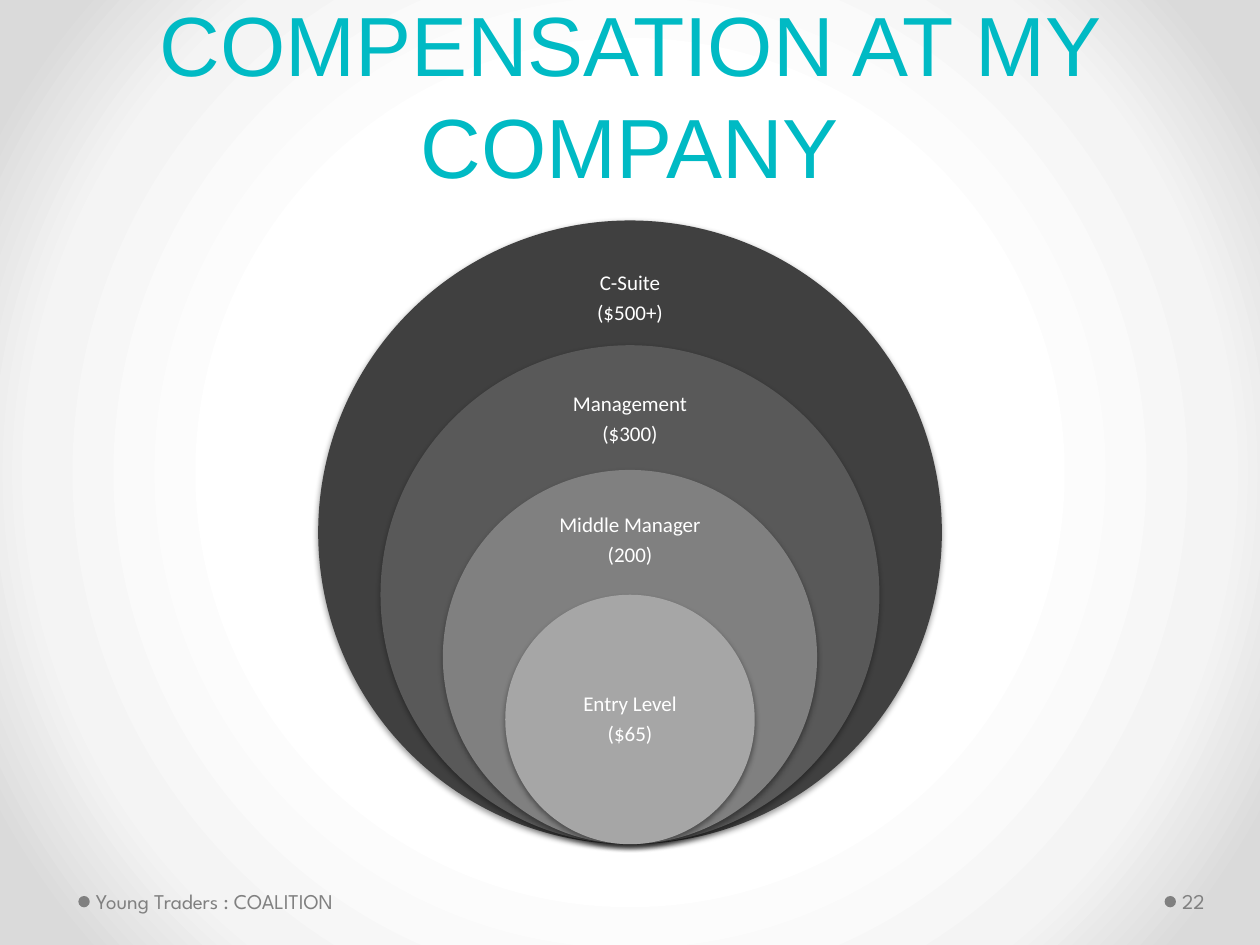
import pptx
import pptx.dml.color
import pptx.enum.shapes
import pptx.enum.text
import pptx.oxml
import pptx.oxml.ns
import pptx.util

Pt = pptx.util.Pt
ALIGN = pptx.enum.text.PP_ALIGN
ANCHOR = pptx.enum.text.MSO_ANCHOR

COLOURS = {
    "title": "00BAC4",
    "label": "FFFFFF",
    "footer": "808080",
    "suite": "404040",
    "management": "595959",
    "middle": "808080",
    "entry": "A6A6A6",
    "shadow": "000000",
}
BACKGROUND_STOPS = [(50, "FFFFFF"), (76, "F4F4F4"), (92, "DADADA")]

WIDTH, HEIGHT = 720, 540
CIRCLE_BOTTOM = 482.4
DIAMETER_STEP = 71.28
LABEL_WIDTH, LABEL_HEIGHT = 140, 40

# Diameter in steps, fill, label lines, distance from circle top to label centre
LEVELS = [
    (5, "suite", ["C-Suite", "($500+)"], 44.6),
    (4, "management", ["Management", "($300)"], 42.8),
    (3, "middle", ["Middle Manager", "(200)"], 40.3),
    (2, "entry", ["Entry Level", "($65)"], DIAMETER_STEP),
]


def rgb(name):
    return pptx.dml.color.RGBColor.from_string(COLOURS[name])


def write_text(shape, lines, *, font, size, colour, align=ALIGN.LEFT,
               anchor=ANCHOR.MIDDLE, insets=(0, 0, 0, 0),
               line_spacing=1.0, space_after=0):
    """Fill a shape with one paragraph per line; insets are left, top, right, bottom."""
    frame = shape.text_frame
    frame.word_wrap = True
    frame.auto_size = pptx.enum.text.MSO_AUTO_SIZE.NONE
    frame.vertical_anchor = anchor
    (frame.margin_left, frame.margin_top,
     frame.margin_right, frame.margin_bottom) = map(Pt, insets)
    frame.text = "\n".join(lines)
    for paragraph in frame.paragraphs:
        paragraph.alignment = align
        paragraph.line_spacing = line_spacing
        paragraph.space_before = Pt(0)
        paragraph.space_after = Pt(space_after)
        for run in paragraph.runs:
            run.font.name = font
            run.font.size = Pt(size)
            run.font.color.rgb = rgb(colour)


class SlideBuilder:
    def __init__(self, slide):
        self.slide = slide
        self.label_style = dict(font="Calibri", size=12, colour="label",
                                align=ALIGN.CENTER, line_spacing=0.9,
                                space_after=4.2)
        self.footer_style = dict(font="League Spartan", size=12,
                                 colour="footer", insets=(3, 3.6, 3.6, 3.6))

    def background(self, stops):
        """Set a circular gradient that spreads from the slide centre."""
        stop_xml = "".join(
            f'<a:gs pos="{position * 1000}"><a:srgbClr val="{colour}"/></a:gs>'
            for position, colour in stops)
        self.slide._element.cSld.insert(0, pptx.oxml.parse_xml(
            f'<p:bg {pptx.oxml.ns.nsdecls("p", "a")}><p:bgPr><a:gradFill>'
            f'<a:gsLst>{stop_xml}</a:gsLst><a:path path="circle">'
            '<a:fillToRect l="50000" t="50000" r="50000" b="50000"/></a:path>'
            '</a:gradFill><a:effectLst/></p:bgPr></p:bg>'))

    def title(self, text):
        title = self.slide.shapes.title
        title.left, title.top = Pt(36), Pt(10.8)
        title.width, title.height = Pt(648), Pt(104.4)
        write_text(title, [text], font="Arial", size=48, colour="title",
                   align=ALIGN.CENTER, anchor=ANCHOR.BOTTOM,
                   insets=(7.2, 3.6, 7.2, 3.6), line_spacing=Pt(58))

    def circle(self, left, top, diameter, colour):
        circle = self.slide.shapes.add_shape(
            pptx.enum.shapes.MSO_SHAPE.OVAL,
            Pt(left), Pt(top), Pt(diameter), Pt(diameter))
        circle.shadow.inherit = False
        circle.fill.solid()
        circle.fill.fore_color.rgb = rgb(colour)
        circle.line.fill.background()
        return circle

    def drop_shadow(self, shape):
        effects = shape._element.spPr.find(pptx.oxml.ns.qn("a:effectLst"))
        effects.append(pptx.oxml.parse_xml(
            f'<a:outerShdw {pptx.oxml.ns.nsdecls("a")} blurRad="{Pt(3.1)}" '
            f'dist="{Pt(1.6)}" dir="5400000" rotWithShape="0">'
            f'<a:srgbClr val="{COLOURS["shadow"]}"><a:alpha val="38000"/>'
            '</a:srgbClr></a:outerShdw>'))

    def text_box(self, left, top, width, height, lines, style):
        box = self.slide.shapes.add_textbox(
            Pt(left), Pt(top), Pt(width), Pt(height))
        write_text(box, lines, **style)

    def level(self, steps, colour, lines, label_centre):
        diameter = steps * DIAMETER_STEP
        top = CIRCLE_BOTTOM - diameter
        circle = self.circle((WIDTH - diameter) / 2, top, diameter, colour)
        self.drop_shadow(circle)
        self.text_box((WIDTH - LABEL_WIDTH) / 2,
                      top + label_centre - LABEL_HEIGHT / 2,
                      LABEL_WIDTH, LABEL_HEIGHT, lines, self.label_style)

    def footer(self, left, width, text):
        """Place footer text with a dot just before it."""
        self.circle(left - 7, 512, 6.5, "footer")
        self.text_box(left, 500.4, width, 28.8, [text], self.footer_style)


def main():
    presentation = pptx.Presentation()
    presentation.slide_width, presentation.slide_height = Pt(WIDTH), Pt(HEIGHT)
    title_only = presentation.slide_layouts[5]
    builder = SlideBuilder(presentation.slides.add_slide(title_only))

    builder.background(BACKGROUND_STOPS)
    builder.title("COMPENSATION AT MY COMPANY")
    for level in LEVELS:
        builder.level(*level)
    builder.footer(51.8, 224, "Young Traders : COALITION")
    builder.footer(672.5, 44, "22")

    presentation.save("out.pptx")


if __name__ == "__main__":
    main()
